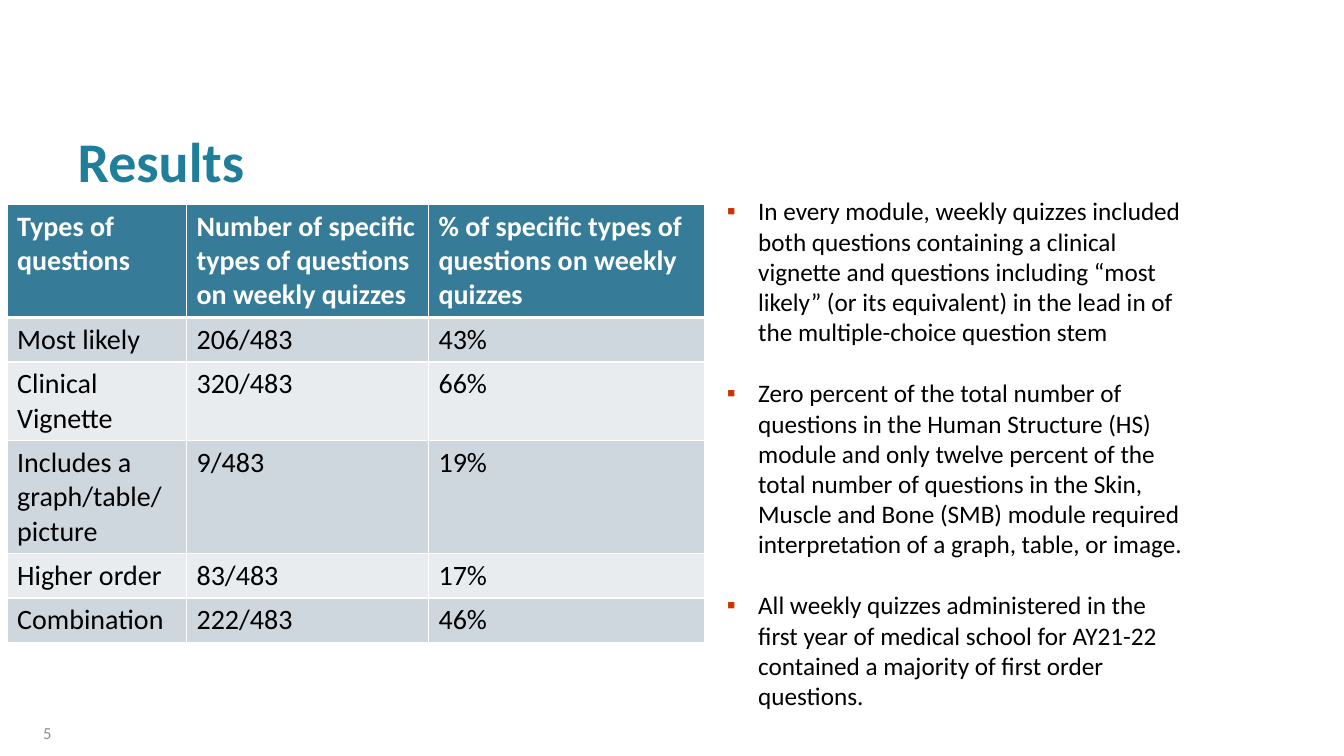
from lxml.etree import SubElement
from pptx import Presentation
from pptx.dml.color import RGBColor
from pptx.enum.text import MSO_ANCHOR, MSO_AUTO_SIZE, PP_ALIGN
from pptx.oxml.ns import qn
from pptx.util import Inches, Pt

COLORS = {
    "title": "1F7F9B", "text": "000000", "number": "8C8C8C", "bullet": "CC3300",
    "header": "367C99", "odd": "CED7DE", "even": "E8ECEF", "white": "FFFFFF",
}


def style(para, size, color, bold=False):
    for name, value in {"name": "Calibri", "size": Pt(size), "bold": bold}.items():
        setattr(para.font, name, value)
    para.font.color.rgb = RGBColor.from_string(COLORS[color])


def add_border(cell, side, points):
    line = SubElement(cell._tc.get_or_add_tcPr(), qn(f"a:ln{side}"), w=str(Pt(points)))
    fill = SubElement(line, qn("a:solidFill"))
    SubElement(fill, qn("a:srgbClr"), val=COLORS["white"])


deck = Presentation()
deck.slide_width, deck.slide_height = Inches(13.33), Inches(7.5)
page = deck.slides.add_slide(deck.slide_layouts[1])
title, findings = page.placeholders
number = page.shapes.add_textbox(0, 0, 0, 0)

# Place the text boxes
places = [
    (title, 0.67, 1.14, 12, 0.89, MSO_ANCHOR.MIDDLE),
    (findings, 7.11, 1.59, 4.77, 5.8, MSO_ANCHOR.TOP),
    (number, 0.33, 7.08, 1.22, 0.38, MSO_ANCHOR.MIDDLE),
]
for box, left, top, width, height, anchor in places:
    box.left, box.top = Inches(left), Inches(top)
    box.width, box.height = Inches(width), Inches(height)
    frame_format = {
        "word_wrap": True, "auto_size": MSO_AUTO_SIZE.NONE, "vertical_anchor": anchor,
    }
    for name, value in frame_format.items():
        setattr(box.text_frame, name, value)

# Title and slide number
for box, text, size, color, bold in [
    (title, "Results", 40, "title", True),
    (number, "5", 12, "number", False),
]:
    box.text_frame.text = text
    para = box.text_frame.paragraphs[0]
    para.alignment = PP_ALIGN.LEFT
    style(para, size, color, bold)

# Findings list
findings.text_frame.margin_top = Inches(0.35)
findings.text_frame.text = "\n".join([
    "In every module, weekly quizzes included both questions containing a clinical "
    "vignette and questions including “most likely” (or its equivalent) in the lead in "
    "of the multiple-choice question stem",
    "Zero percent of the total number of questions in the Human Structure (HS) module "
    "and only twelve percent of the total number of questions in the Skin, Muscle and "
    "Bone (SMB) module required interpretation of a graph, table, or image.",
    "All weekly quizzes administered in the first year of medical school for AY21-22 "
    "contained a majority of first order questions.",
])
for index, para in enumerate(findings.text_frame.paragraphs):
    para.space_before = Pt(22 if index else 0)
    properties = para._p.get_or_add_pPr()
    properties.set("marL", str(Inches(0.31)))
    properties.set("indent", str(-Inches(0.31)))
    bullet_color = SubElement(properties, qn("a:buClr"))
    SubElement(bullet_color, qn("a:srgbClr"), val=COLORS["bullet"])
    SubElement(properties, qn("a:buChar"), char="▪")
    style(para, 18, "text")

# Question type table
rows = [
    ("Types of questions", "Number of specific types of questions on weekly quizzes",
     "% of specific types of questions on weekly quizzes"),
    ("Most likely", "206/483", "43%"),
    ("Clinical Vignette", "320/483", "66%"),
    ("Includes a graph/table/picture", "9/483", "19%"),
    ("Higher order", "83/483", "17%"),
    ("Combination", "222/483", "46%"),
]
table = page.shapes.add_table(
    len(rows), 3, Inches(0.07), Inches(2.03), Inches(6.92), Inches(4.27)).table
for column, width in zip(table.columns, [1.78, 2.4, 2.74]):
    column.width = Inches(width)
for row, height in zip(table.rows, [1.1, 0.43, 0.77, 1.1, 0.43, 0.44]):
    row.height = Inches(height)

for row_index, values in enumerate(rows):
    is_header = row_index == 0
    band = "header" if is_header else ("odd" if row_index % 2 else "even")
    for column_index, value in enumerate(values):
        cell = table.cell(row_index, column_index)
        cell.text = value
        style(cell.text_frame.paragraphs[0], 20, "white" if is_header else "text", is_header)
        top, bottom = 3 if row_index == 1 else 1, 3 if is_header else 1
        for side, points in {"L": 1, "R": 1, "T": top, "B": bottom}.items():
            add_border(cell, side, points)
        cell.fill.solid()
        cell.fill.fore_color.rgb = RGBColor.from_string(COLORS[band])

deck.save("out.pptx")
